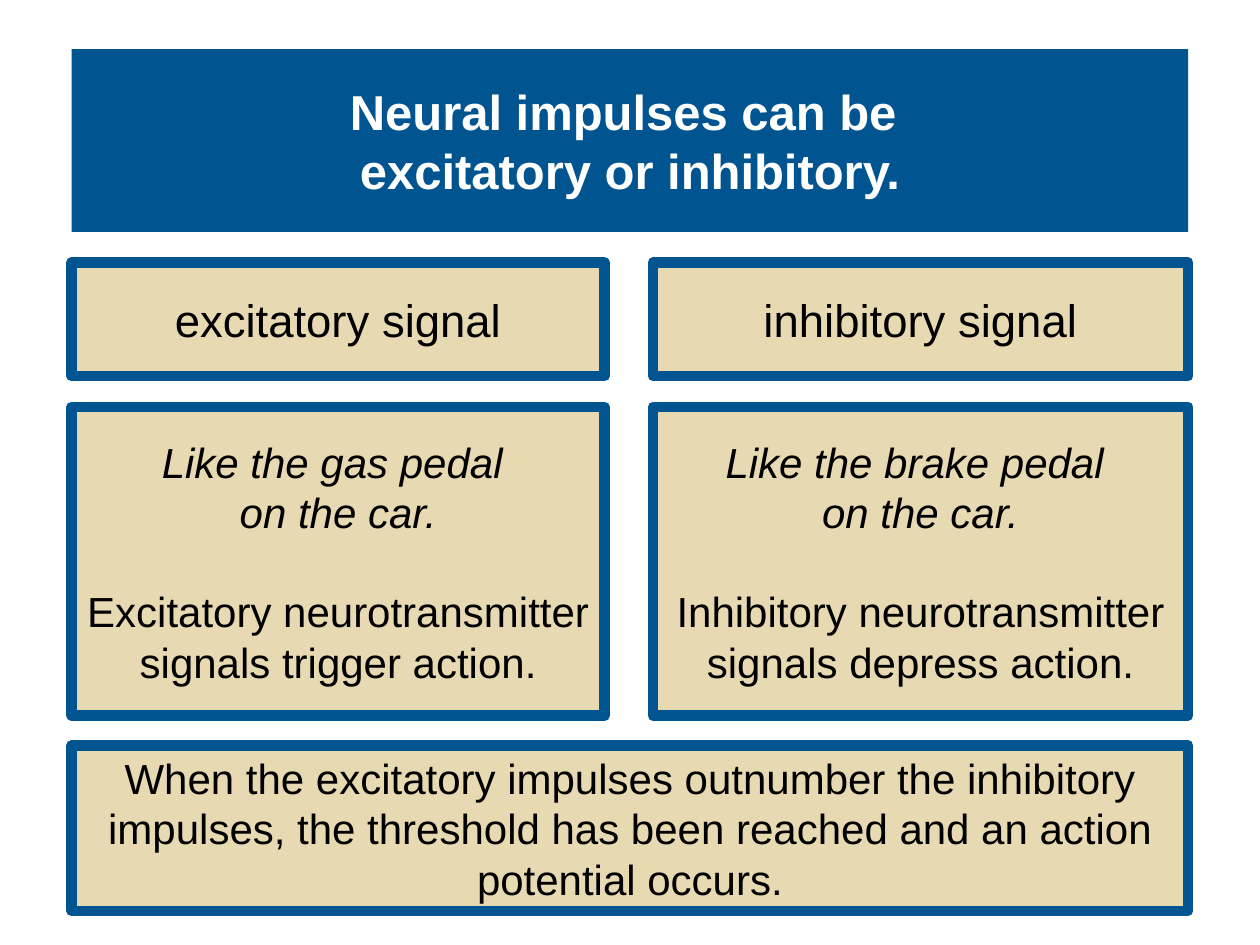
from dataclasses import dataclass

from lxml import etree
from pptx import Presentation
from pptx.dml.color import RGBColor
from pptx.enum.shapes import MSO_SHAPE
from pptx.enum.text import MSO_ANCHOR, PP_ALIGN
from pptx.oxml.ns import qn
from pptx.util import Pt

RECT = MSO_SHAPE.RECTANGLE
MIDDLE = MSO_ANCHOR.MIDDLE
CENTER = PP_ALIGN.CENTER

COLORS = {"blue": "005490", "sand": "E7D9B1", "white": "FFFFFF", "black": "000000"}

# Columns as (left, width), rows as (top, height), in points
LEFT, RIGHT, FULL = (41, 304.5), (373, 306), (41, 638)
TITLE, HEAD, BODY, FOOT = (28, 104.5), (150, 65), (232.5, 176.5), (426, 94.5)


@dataclass
class Para:
    text: str
    size: int = 24
    italic: bool = False
    bold: bool = False
    gap: float = 0


@dataclass
class Box:
    col: tuple[float, float]
    row: tuple[float, float]
    paras: list[Para]
    fill: str = "sand"
    ink: str = "black"
    edge: str | None = "blue"


def rgb(name: str) -> RGBColor:
    return RGBColor.from_string(COLORS[name])


def write(para, item: Para, ink: str) -> None:
    para.text = item.text
    para.alignment = CENTER
    para.space_before = Pt(item.gap)
    # Character format of the paragraph's runs
    style = {"name": "Arial", "size": Pt(item.size),
             "bold": item.bold, "italic": item.italic}
    for run in para.runs:
        for key, value in style.items():
            setattr(run.font, key, value)
        run.font.color.rgb = rgb(ink)


def draw(slide, box: Box) -> None:
    (left, width), (top, height) = box.col, box.row
    shape = slide.shapes.add_shape(RECT, Pt(left), Pt(top), Pt(width), Pt(height))
    shape.shadow.inherit = False
    shape.fill.solid()
    shape.fill.fore_color.rgb = rgb(box.fill)
    # Thick border with round corners, or none
    if box.edge:
        shape.line.color.rgb = rgb(box.edge)
        shape.line.width = Pt(6)
        etree.SubElement(shape.line._get_or_add_ln(), qn("a:round"))
    else:
        shape.line.fill.background()
    frame = shape.text_frame
    layout = {"word_wrap": True, "vertical_anchor": MIDDLE,
              "margin_left": Pt(7.2), "margin_right": Pt(7.2),
              "margin_top": Pt(3.6), "margin_bottom": Pt(3.6)}
    for key, value in layout.items():
        setattr(frame, key, value)
    for i, item in enumerate(box.paras):
        write(frame.add_paragraph() if i else frame.paragraphs[0], item, box.ink)


def signal(col: tuple[float, float], kind: str, pedal: str, verb: str) -> list[Box]:
    """Heading and explanation for one kind of signal."""
    return [
        Box(col, HEAD, [Para(f"{kind} signal", 26)]),
        Box(col, BODY, [
            Para(f"Like the {pedal} pedal ", italic=True),
            Para("on the car.", italic=True),
            Para(f"{kind.capitalize()} neurotransmitter signals {verb} action.", gap=28),
        ]),
    ]


def main() -> None:
    deck = Presentation()
    deck.slide_width, deck.slide_height = Pt(720), Pt(540)
    slide = deck.slides.add_slide(deck.slide_layouts[6])
    boxes = [
        # Title band
        Box(FULL, TITLE,
            [Para("Neural impulses can be \vexcitatory or inhibitory.", 28, bold=True)],
            fill="blue", ink="white", edge=None),
        # Two columns
        *signal(LEFT, "excitatory", "gas", "trigger"),
        *signal(RIGHT, "inhibitory", "brake", "depress"),
        # Conclusion
        Box(FULL, FOOT, [Para(
            "When the excitatory impulses outnumber the inhibitory impulses, "
            "the threshold has been reached and an action potential occurs.")]),
    ]
    for box in boxes:
        draw(slide, box)
    deck.save("out.pptx")


if __name__ == "__main__":
    main()
